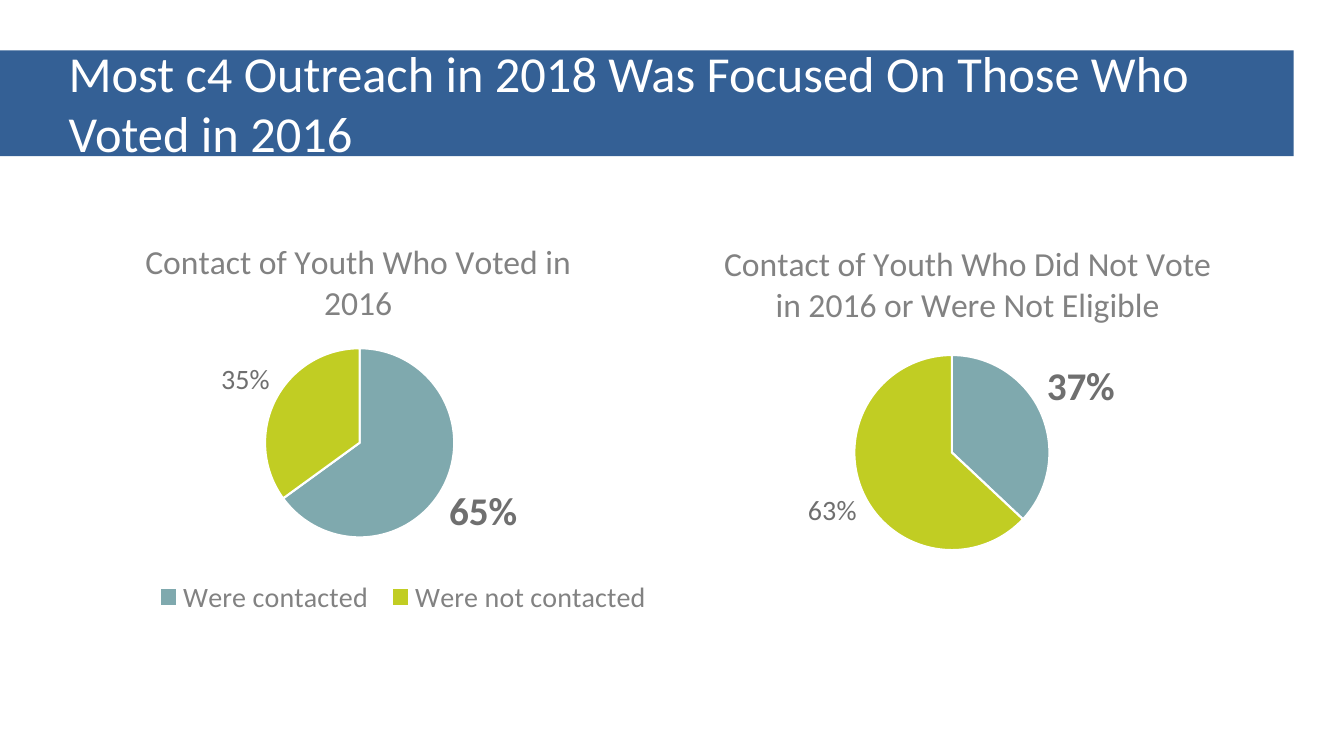
from lxml import etree
from pptx import Presentation
from pptx.chart.data import CategoryChartData
from pptx.dml.color import RGBColor
from pptx.enum.chart import XL_CHART_TYPE as ChartType
from pptx.enum.chart import XL_LABEL_POSITION as LabelPosition
from pptx.enum.chart import XL_LEGEND_POSITION as LegendPosition
from pptx.enum.shapes import MSO_SHAPE as Preset
from pptx.enum.text import MSO_ANCHOR as Anchor
from pptx.enum.text import MSO_AUTO_SIZE as AutoSize
from pptx.enum.text import PP_ALIGN as Align
from pptx.oxml.ns import qn
from pptx.util import Pt

BLUE = RGBColor(0x34, 0x60, 0x95)
TEAL = RGBColor(0x7F, 0xA9, 0xAE)
LIME = RGBColor(0xC1, 0xCD, 0x23)
WHITE = RGBColor(0xFF, 0xFF, 0xFF)
DARK_GREY = RGBColor(0x3F, 0x3F, 0x3F)
LABEL_GREY = RGBColor(0x6F, 0x6F, 0x6F)
TITLE_GREY = RGBColor(0x82, 0x82, 0x82)


class OutreachSlide:
    font_name = "Calibri"

    def __init__(self, deck):
        self.slide = deck.slides.add_slide(deck.slide_layouts[5])

    def style(self, font, size, color, bold=False):
        font.name = self.font_name
        font.size = Pt(size)
        font.bold = bold
        font.color.rgb = color

    def banner(self, left, top, width, height):
        band = self.slide.shapes.add_shape(
            Preset.RECTANGLE, Pt(left), Pt(top), Pt(width), Pt(height))
        band.shadow.inherit = False
        band.fill.solid()
        band.fill.fore_color.rgb = BLUE
        band.line.fill.background()

    def title(self, text, left, top, width, height):
        heading = self.slide.shapes.title
        heading.left, heading.top = Pt(left), Pt(top)
        heading.width, heading.height = Pt(width), Pt(height)
        frame = heading.text_frame
        frame.word_wrap = True
        frame.auto_size = AutoSize.NONE
        frame.vertical_anchor = Anchor.MIDDLE
        paragraph = frame.paragraphs[0]
        paragraph.alignment = Align.LEFT
        run = paragraph.add_run()
        run.text = text
        self.style(run.font, 36, WHITE)
        # Bring the title in front of the banner
        heading.element.getparent().append(heading.element)

    def place(self, part, index, **fractions):
        """Fix a chart part at fractions of the chart area."""
        for old in part.findall(qn("c:layout")):
            part.remove(old)
        layout = etree.Element(qn("c:layout"))
        manual = etree.SubElement(layout, qn("c:manualLayout"))
        if part.tag == qn("c:plotArea"):
            etree.SubElement(manual, qn("c:layoutTarget")).set("val", "inner")
        for side in ("x", "y"):
            etree.SubElement(manual, qn(f"c:{side}Mode")).set("val", "edge")
        for key, value in fractions.items():
            etree.SubElement(manual, qn(f"c:{key}")).set("val", str(value))
        part.insert(index, layout)

    def pie(self, heading, categories, shares, box, title_at, plot_at, legend_at=None):
        contact = CategoryChartData()
        contact.categories = categories
        contact.add_series("Series 1", shares)
        chart = self.slide.shapes.add_chart(
            ChartType.PIE, *map(Pt, box), contact).chart
        self.style(chart.font, 20, DARK_GREY)

        # Heading and plot area
        chart.has_title = True
        run = chart.chart_title.text_frame.paragraphs[0].add_run()
        run.text = heading
        self.style(run.font, 24, TITLE_GREY)
        self.place(chart.element.xpath("c:chart/c:title")[0], 1, **title_at)
        self.place(chart.element.xpath("c:chart/c:plotArea")[0], 0, **plot_at)

        # Wedges
        plot = chart.plots[0]
        plot.vary_by_categories = True
        series = plot.series[0]
        for index, color in enumerate((TEAL, LIME)):
            wedge = series.points[index].format
            wedge.fill.solid()
            wedge.fill.fore_color.rgb = color
            wedge.line.color.rgb = WHITE
            wedge.line.width = Pt(1.5)

        # Percentages, with the contacted share emphasised
        labels = series.data_labels
        labels.show_value = False
        labels.show_percentage = True
        labels.number_format = "0%"
        labels.number_format_is_linked = False
        labels.position = LabelPosition.OUTSIDE_END
        self.style(labels.font, 20, LABEL_GREY)
        contacted = series.points[0].data_label
        self.style(contacted.font, 28, LABEL_GREY, bold=True)
        contacted.position = LabelPosition.OUTSIDE_END
        for flag, value in (("showVal", "0"), ("showPercent", "1")):
            chart.element.xpath(f".//c:dLbl/c:{flag}")[0].set("val", value)

        # Legend
        chart.has_legend = legend_at is not None
        if legend_at:
            chart.legend.position = LegendPosition.BOTTOM
            chart.legend.include_in_layout = False
            self.style(chart.legend.font, 20, TITLE_GREY)
            self.place(chart.legend._element, 1, **legend_at)


def main():
    deck = Presentation()
    deck.slide_width, deck.slide_height = Pt(960), Pt(540)
    page = OutreachSlide(deck)

    # Title on its banner
    page.banner(0, 36, 924, 75.6)
    page.title("Most c4 Outreach in 2018 Was Focused On Those Who Voted in 2016",
               41.8, 25.9, 833.8, 94.3)

    # Youth who voted, with the shared legend
    page.pie("Contact of Youth Who Voted in 2016",
             ("Were contacted", "Were not contacted"), (65, 35),
             (41.8, 154.8, 443.5, 293.8),
             title_at={"x": 0.13, "y": 0.04},
             plot_at={"x": 0.33, "y": 0.32, "w": 0.31, "h": 0.46},
             legend_at={"x": 0.14, "y": 0.88, "w": 0.83, "h": 0.09})

    # Youth who did not vote
    page.pie("Contact of Youth Who Did Not Vote in 2016 or Were Not Eligible",
             ("1", "2"), (37, 63),
             (457.9, 154.8, 457.9, 253.4),
             title_at={"x": 0.12, "y": 0.05},
             plot_at={"x": 0.33, "y": 0.39, "w": 0.31, "h": 0.55})

    deck.save("out.pptx")


if __name__ == "__main__":
    main()
